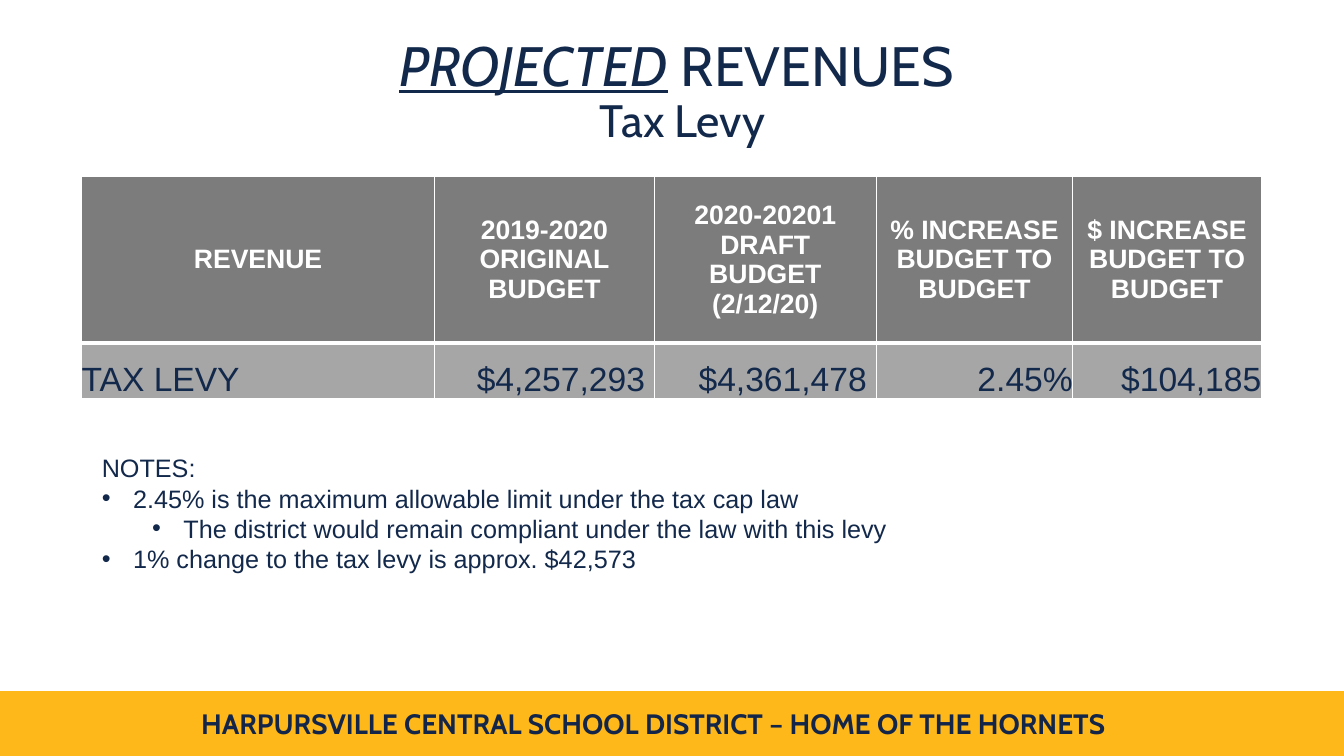
from lxml.etree import SubElement
from pptx import Presentation
from pptx.dml.color import RGBColor
from pptx.enum.shapes import MSO_SHAPE
from pptx.enum.text import MSO_ANCHOR, MSO_AUTO_SIZE, PP_ALIGN
from pptx.oxml.ns import qn
from pptx.util import Pt

SCALE = 9144  # EMU per px, at 100 px to the inch
NAVY, GOLD, WHITE = "13294B", "FFB819", "FFFFFF"
HEAD, BODY = "7C7C7C", "A6A6A6"

COLS = [350, 218, 220, 195, 187]
ROWS = [165, 55]
CELLS = [
    ["REVENUE", "2019-2020\nORIGINAL\nBUDGET",
     "2020-20201\nDRAFT\nBUDGET\n(2/12/20)",
     "% INCREASE BUDGET TO BUDGET", "$ INCREASE BUDGET TO BUDGET"],
    ["TAX LEVY", "$4,257,293 ", "$4,361,478 ", "2.45%", "$104,185"],
]
NOTES = [
    (None, "NOTES:"),
    (0, "2.45% is the maximum allowable limit under the tax cap law"),
    (1, "The district would remain compliant under the law with this levy"),
    (0, "1% change to the tax levy is approx. $42,573"),
]


def px(n):
    return n * SCALE


def paint(color, value):
    color.rgb = RGBColor.from_string(value)


def fill(item, value):
    item.fill.solid()
    paint(item.fill.fore_color, value)


def place(shape, box):
    shape.left, shape.top, shape.width, shape.height = map(px, box)


def write(para, text, size, color=NAVY, face="Arial", align=None,
          bold=False, italic=False, under=False):
    """Append text to a paragraph; each newline becomes a line break."""
    if align is not None:
        para.alignment = align
    for i, line in enumerate(text.split("\n")):
        if i:
            para.add_line_break()
        if not line:
            continue
        run = para.add_run()
        run.text = line
        font = run.font
        font.size, font.name = Pt(size), face
        font.bold, font.italic, font.underline = bold, italic, under
        paint(font.color, color)


def footer(slide, box):
    left, top, width, height = box
    band = slide.shapes.add_shape(MSO_SHAPE.RECTANGLE, *map(px, box))
    band.shadow.inherit = False
    fill(band, GOLD)
    paint(band.line.color, GOLD)
    band.line.width = Pt(1)
    label = slide.shapes.add_textbox(
        px(left + 176), px(top + 10), px(944), px(44))
    label.text_frame.word_wrap = True
    write(label.text_frame.paragraphs[0],
          "HARPURSVILLE CENTRAL SCHOOL DISTRICT – HOME OF THE HORNETS",
          20, color="132649", face="Cabin", bold=True, align=PP_ALIGN.CENTER)


def title(slide, box):
    shape = slide.shapes.title
    place(shape, box)
    fill(shape, WHITE)
    frame = shape.text_frame
    frame.auto_size = MSO_AUTO_SIZE.NONE
    frame.vertical_anchor = MSO_ANCHOR.MIDDLE
    para = frame.paragraphs[0]
    para.line_spacing = 0.9
    para.alignment = PP_ALIGN.CENTER
    write(para, "PROJECTED", 39.6, face="Cabin", italic=True, under=True)
    write(para, " REVENUES \n", 39.6, face="Cabin")
    write(para, "Tax Levy", 32.4, face="Cabin")


def border(cell, **widths):
    """Draw white cell edges, given in points by side: L, R, T, B."""
    props = cell._tc.get_or_add_tcPr()
    for side, width in widths.items():
        edge = SubElement(props, qn(f"a:ln{side}"), w=str(Pt(width)))
        solid = SubElement(edge, qn("a:solidFill"))
        SubElement(solid, qn("a:srgbClr"), val=WHITE)


def levy(slide, box):
    table = slide.shapes.add_table(
        len(ROWS), len(COLS), *map(px, box)).table
    table.first_row = table.horz_banding = False
    for col, width in zip(table.columns, COLS):
        col.width = px(width)
    for row, height in zip(table.rows, ROWS):
        row.height = px(height)
    for r, line in enumerate(CELLS):
        for c, text in enumerate(line):
            cell = table.cell(r, c)
            head = r == 0
            border(cell, L=1, R=1, T=1 if head else 3, B=3 if head else 1)
            fill(cell, HEAD if head else BODY)
            cell.margin_left = cell.margin_right = 0
            cell.margin_top = cell.margin_bottom = 0
            para = cell.text_frame.paragraphs[0]
            if head:
                cell.vertical_anchor = MSO_ANCHOR.MIDDLE
                write(para, text, 19, color=WHITE, bold=True,
                      align=PP_ALIGN.CENTER)
            else:
                cell.vertical_anchor = MSO_ANCHOR.BOTTOM
                write(para, text, 24,
                      align=PP_ALIGN.RIGHT if c else PP_ALIGN.LEFT)


def notes(slide, box):
    shape = slide.placeholders[1]
    place(shape, box)
    frame = shape.text_frame
    frame.auto_size = MSO_AUTO_SIZE.NONE
    for i, (level, text) in enumerate(NOTES):
        para = frame.add_paragraph() if i else frame.paragraphs[0]
        para.level = level or 0
        para.space_before = Pt(0)
        props = para._p.get_or_add_pPr()
        if level is None:
            props.set("marL", "0")
            props.set("indent", "0")
            SubElement(props, qn("a:buNone"))
        else:
            props.set("marL", str(px(31 + 50 * level)))
            props.set("indent", str(px(-31)))
            SubElement(props, qn("a:buFont"), typeface="Arial")
            SubElement(props, qn("a:buChar"), char="•")
        write(para, text, 18)


def main():
    deck = Presentation()
    deck.slide_width, deck.slide_height = px(1333), px(750)
    slide = deck.slides.add_slide(deck.slide_layouts[1])
    footer(slide, (0, 686, 1333, 63))
    title(slide, (102, 40, 1150, 104))
    levy(slide, (81, 175, sum(COLS), sum(ROWS)))
    notes(slide, (91, 444, 988, 162))
    deck.save("out.pptx")


if __name__ == "__main__":
    main()
